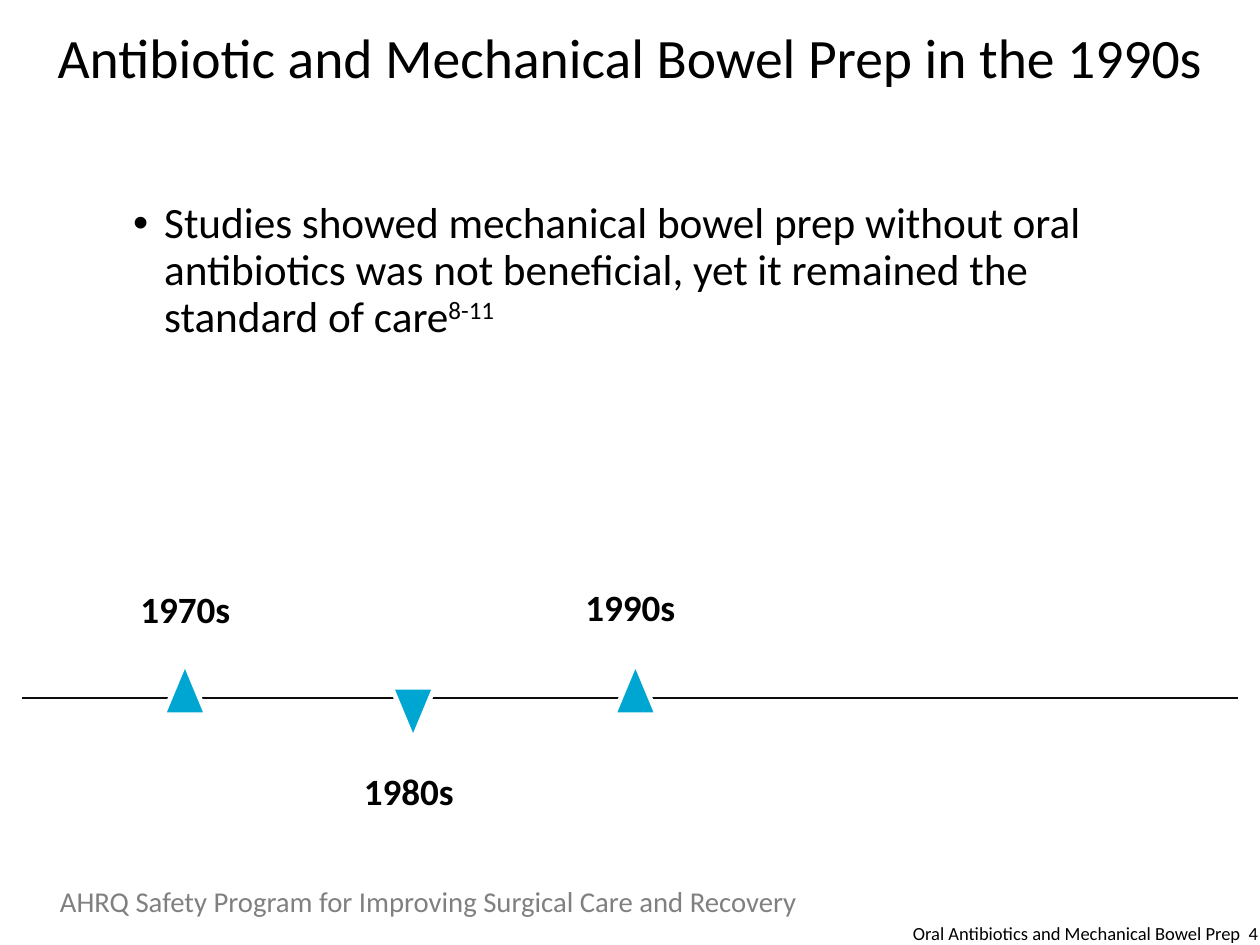
import pptx
import pptx.util
import pptx.dml.color
import pptx.enum.shapes
import pptx.enum.text
import pptx.oxml
import pptx.oxml.ns

Cm, Pt = pptx.util.Cm, pptx.util.Pt
ALIGN = pptx.enum.text.PP_ALIGN
ANCHOR = pptx.enum.text.MSO_ANCHOR

COLORS = {"ink": "000000", "grey": "808080", "blue": "00A6D2",
          "axis": "0D0D0D", "white": "FFFFFF"}
AXIS_Y = 15.95
MARK_W, MARK_H = 0.99, 1.19
TIGHT = (0.18, 0.1, 0.18, 0.1)
WIDE = (0.25, 0.13, 0.25, 0.13)

# Decade, label box, label insets, mark left, mark top, turn
DECADES = [
    ("1970s", (2.84, 13.26, 2.79, 1.68), WIDE, 3.73, 15.14, 0),
    ("1980s", (8.13, 17.45, 2.59, 1.55), TIGHT, 8.94, 15.7, 180),
    ("1990s", (11.91, 13.26, 4.98, 1.19), TIGHT, 14.02, 15.14, 0),
]


def color(name):
    return pptx.dml.color.RGBColor.from_string(COLORS[name])


def apply(item, values):
    for name, value in values.items():
        setattr(item, name, value)


def place(shape, box):
    names = ("left", "top", "width", "height")
    apply(shape, dict(zip(names, map(Cm, box))))


def write(shape, text, size, tone="ink", bold=False, pads=WIDE,
          anchor=ANCHOR.TOP, **form):
    """Fill a text shape with one formatted paragraph."""
    frame = shape.text_frame
    apply(frame, {"word_wrap": True, "vertical_anchor": anchor,
                  "auto_size": pptx.enum.text.MSO_AUTO_SIZE.NONE})
    sides = ("margin_left", "margin_top", "margin_right", "margin_bottom")
    apply(frame, dict(zip(sides, map(Cm, pads))))
    para = frame.paragraphs[0]
    apply(para, {"space_before": Pt(0), **form})
    add_run(para, text, size, tone, bold)
    return para


def add_run(para, text, size, tone="ink", bold=False):
    run = para.add_run()
    run.text = text
    apply(run.font, {"name": "Calibri", "size": Pt(size), "bold": bold})
    run.font.color.rgb = color(tone)
    return run


def add_label(slide, box, text, size, **form):
    label = slide.shapes.add_textbox(*map(Cm, box))
    write(label, text, size, **form)


def add_bullet(para, indent):
    props = para._p.get_or_add_pPr()
    props.set("marL", str(Cm(indent)))
    props.set("indent", str(-Cm(indent)))
    tag = pptx.oxml.ns.nsdecls("a")
    for part in (f'<a:buFont {tag} typeface="Arial"/>',
                 f'<a:buChar {tag} char="•"/>'):
        props.append(pptx.oxml.parse_xml(part))


def add_axis(slide):
    kind = pptx.enum.shapes.MSO_CONNECTOR.STRAIGHT
    axis = slide.shapes.add_connector(
        kind, Cm(0.51), Cm(AXIS_Y), Cm(28.27), Cm(AXIS_Y))
    axis.line.width = Pt(1)
    axis.line.color.rgb = color("axis")
    tag = pptx.oxml.ns.nsdecls("a")
    axis._element.spPr.append(pptx.oxml.parse_xml(f"<a:effectLst {tag}/>"))


def add_mark(slide, left, top, turn):
    kind = pptx.enum.shapes.MSO_SHAPE.ISOSCELES_TRIANGLE
    mark = slide.shapes.add_shape(
        kind, *map(Cm, (left, top, MARK_W, MARK_H)))
    mark.rotation = turn
    mark.shadow.inherit = False
    mark.fill.solid()
    mark.fill.fore_color.rgb = color("blue")
    mark.line.width = Pt(3)
    mark.line.color.rgb = color("white")


def main():
    deck = pptx.Presentation()
    apply(deck, {"slide_width": Cm(28.78), "slide_height": Cm(21.59)})
    slide = deck.slides.add_slide(deck.slide_layouts[1])
    title, body = slide.placeholders

    # Title
    place(title, (0, 0, 28.78, 2.77))
    write(title, "Antibiotic and Mechanical Bowel Prep in the 1990s", 36,
          anchor=ANCHOR.MIDDLE, alignment=ALIGN.CENTER, line_spacing=0.9)

    # Finding with its citation
    place(body, (2.79, 4.47, 24, 4.22))
    para = write(body, "Studies showed mechanical bowel prep without oral "
                 "antibiotics was not beneficial, yet it remained the "
                 "standard of care", 28, line_spacing=0.9)
    add_bullet(para, 0.71)
    cite = add_run(para, "8-11", 28)
    cite.font._element.set("baseline", "30000")

    # Timeline
    add_axis(slide)
    for name, box, pads, left, top, turn in DECADES:
        add_mark(slide, left, top, turn)
        add_label(slide, box, name, 24, bold=True, pads=pads,
                  alignment=ALIGN.LEFT if turn else ALIGN.CENTER,
                  space_after=Pt(4.5))

    # Footer
    add_label(slide, (1.12, 20.07, 17.68, 1.5),
              "AHRQ Safety Program for Improving Surgical Care and Recovery",
              18.6, tone="grey")
    add_label(slide, (18.77, 20.73, 9.98, 1.19),
              "Oral Antibiotics and Mechanical Bowel Prep  4", 12,
              pads=(0.25, 0.13, 0, 0.13), anchor=ANCHOR.MIDDLE,
              alignment=ALIGN.RIGHT)

    deck.save("out.pptx")


if __name__ == "__main__":
    main()
